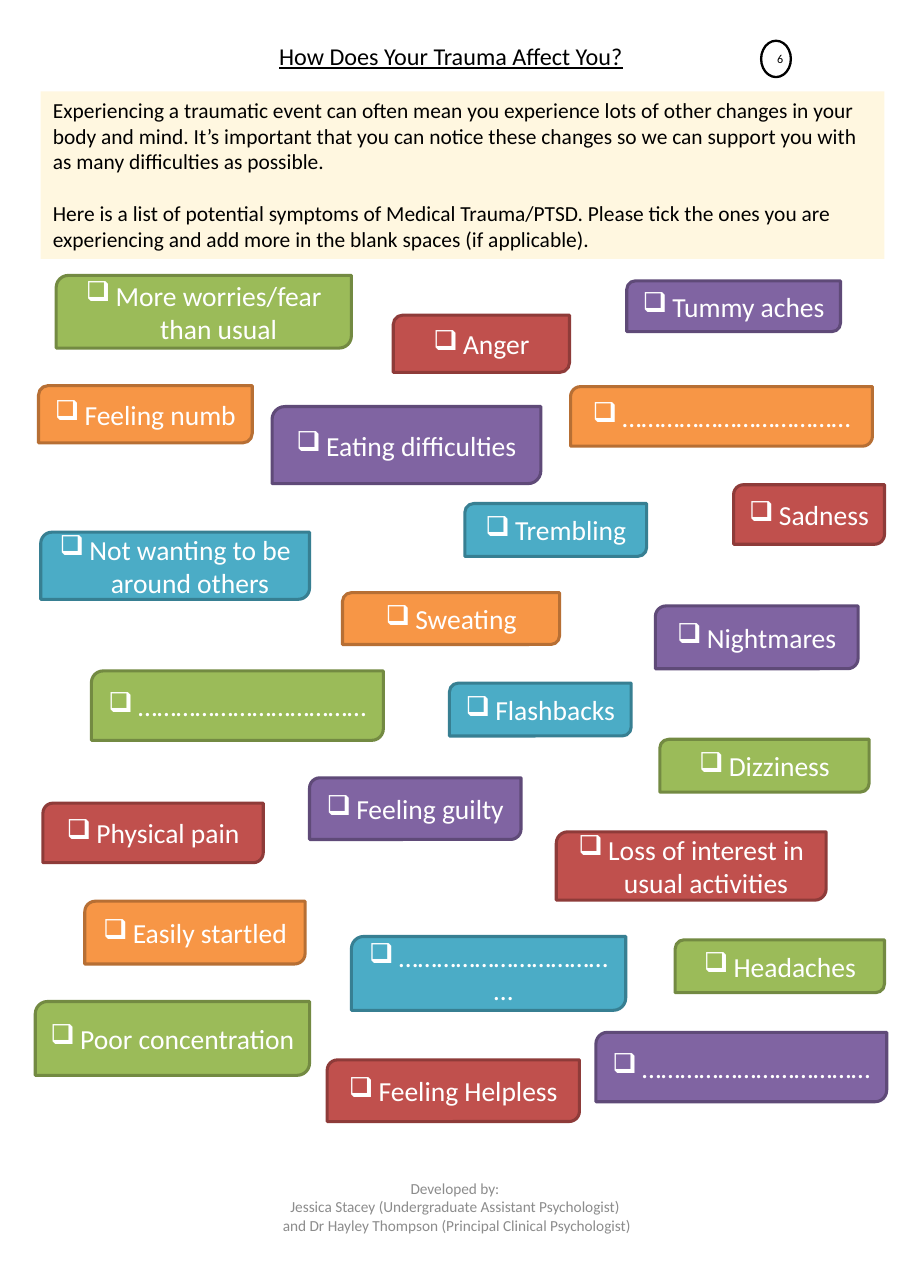
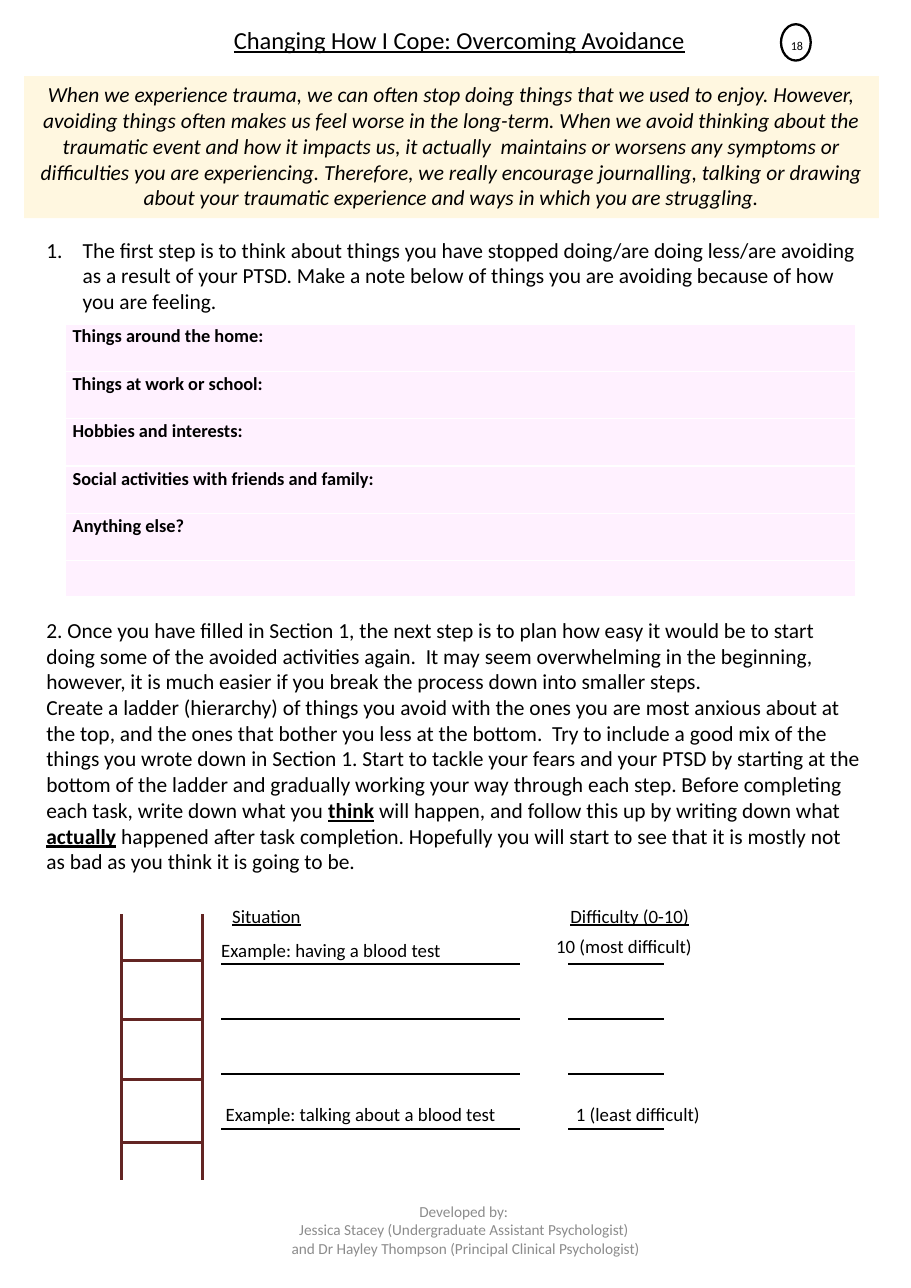
import pptx
import pptx.util
import pptx.dml.color
import pptx.enum.shapes
import pptx.enum.text
import pptx.oxml.ns
import lxml.etree

Inches = pptx.util.Inches
Pt = pptx.util.Pt
RGBColor = pptx.dml.color.RGBColor
SHAPE = pptx.enum.shapes.MSO_SHAPE
ALIGN = pptx.enum.text.PP_ALIGN
ANCHOR = pptx.enum.text.MSO_ANCHOR
qn = pptx.oxml.ns.qn

# Shared look
FONT = "Calibri"
BLACK = RGBColor(0x00, 0x00, 0x00)
WHITE = RGBColor(0xFF, 0xFF, 0xFF)
GREY = RGBColor(0x8C, 0x8C, 0x8C)
AMBER = RGBColor(0xFF, 0xC0, 0x00)
PINK = RGBColor(0xFF, 0xCC, 0xFF)
BROWN = RGBColor(0x63, 0x25, 0x23)

# Tag colours: fill, line
RED = RGBColor(0xC0, 0x50, 0x4D), RGBColor(0x8E, 0x3B, 0x39)
ORANGE = RGBColor(0xF7, 0x96, 0x46), RGBColor(0xB7, 0x6F, 0x34)
PURPLE = RGBColor(0x80, 0x64, 0xA2), RGBColor(0x5F, 0x4A, 0x78)
TEAL = RGBColor(0x4B, 0xAC, 0xC6), RGBColor(0x37, 0x7F, 0x92)
GREEN = RGBColor(0x9B, 0xBB, 0x59), RGBColor(0x73, 0x8A, 0x42)

CREDIT = ["Developed by: ",
          "Jessica Stacey (Undergraduate Assistant Psychologist) ",
          "and Dr Hayley Thompson (Principal Clinical Psychologist)"]

# Symptom tags: left, top, width, height, colours, text
DOTS = "………………………………"
TAGS = [
    (3.57, 2.86, 1.6, 0.52, RED, "Anger"),
    (0.35, 3.5, 1.94, 0.52, ORANGE, "Feeling numb"),
    (0.39, 7.29, 2, 0.54, RED, "Physical pain"),
    (2.47, 3.69, 2.44, 0.7, PURPLE, "Eating difficulties"),
    (3.11, 5.38, 1.97, 0.47, ORANGE, "Sweating"),
    (6.66, 4.4, 1.37, 0.54, RED, "Sadness"),
    (2.81, 7.06, 1.92, 0.56, PURPLE, "Feeling guilty"),
    (4.08, 6.2, 1.65, 0.48, TEAL, "Flashbacks"),
    (0.51, 2.5, 2.68, 0.66, GREEN, "More worries/fear than usual"),
    (6.13, 8.53, 1.9, 0.48, GREEN, "Headaches"),
    (0.32, 9.09, 2.49, 0.67, GREEN, "Poor concentration"),
    (0.37, 4.83, 2.44, 0.61, TEAL, "Not wanting to be around others"),
    (5.05, 7.55, 2.45, 0.62, RED, "Loss of interest in usual activities"),
    (0.77, 8.18, 2, 0.57, ORANGE, "Easily startled"),
    (5.95, 5.5, 1.84, 0.57, PURPLE, "Nightmares"),
    (5.69, 2.55, 1.94, 0.46, PURPLE, "Tummy aches"),
    (5.41, 9.37, 2.64, 0.63, PURPLE, DOTS),
    (0.83, 6.09, 2.65, 0.63, GREEN, DOTS),
    (3.19, 8.5, 2.49, 0.67, TEAL, DOTS),
    (5.18, 3.51, 2.74, 0.54, ORANGE, DOTS),
    (2.97, 9.62, 2.29, 0.56, RED, "Feeling Helpless"),
    (4.22, 4.57, 1.65, 0.48, TEAL, "Trembling"),
    (5.99, 6.71, 1.9, 0.48, GREEN, "Dizziness"),
]

INTRO = [
    "Experiencing a traumatic event can often mean you experience lots of "
    "other changes in your body and mind. It’s important that you can notice "
    "these changes so we can support you with as many difficulties as possible.",
    "Here is a list of potential symptoms of Medical Trauma/PTSD. Please tick "
    "the ones you are experiencing and add more in the blank spaces (if "
    "applicable)."]

AVOID = [
    "When we experience trauma, we can often stop doing things that we used to "
    "enjoy. However, avoiding things often makes us feel worse in the "
    "long-term. When we avoid thinking about the traumatic event and how it "
    "impacts us, it actually  maintains or worsens any symptoms or "
    "difficulties you are experiencing. Therefore, we really encourage "
    "journalling, talking or drawing about your traumatic experience and ways "
    "in which you are struggling."]

FIRST = [
    "The first step is to think about things you have stopped doing/are doing "
    "less/are avoiding as a result of your PTSD. Make a note below of things "
    "you are avoiding because of how you are feeling."]

# A tuple holds runs; every second run is stressed
NEXT = [
    "2. Once you have filled in Section 1, the next step is to plan how easy "
    "it would be to start doing some of the avoided activities again.  It may "
    "seem overwhelming in the beginning, however, it is much easier if you "
    "break the process down into smaller steps.",
    ("Create a ladder (hierarchy) of things you avoid with the ones you are "
     "most anxious about at the top, and the ones that bother you less at the "
     "bottom.  Try to include a good mix of the things you wrote down in "
     "Section 1. Start to tackle your fears and your PTSD by starting at the "
     "bottom of the ladder and gradually working your way through each step. "
     "Before completing each task, write down what you ", "think",
     " will happen, and follow this up by writing down what ", "actually",
     " happened after task completion. Hopefully you will start to see that "
     "it is mostly not as bad as you think it is going to be.")]

ROWS = ["Things around the home:", "Things at work or school:",
        "Hobbies and interests:", "Social activities with friends and family:",
        "Anything else?", ""]

# Ladder labels: left, top, width, text, underline
LABELS = [
    (2.01, 8.16, 2, "Situation", True),
    (5.08, 8.16, 1.5, "Difficulty (0-10)", True),
    (1.91, 8.47, 3, "Example: having a blood test", False),
    (4.95, 8.43, 1.48, "10 (most difficult)", False),
    (1.95, 9.96, 2.9, "Example: talking about a blood test", False),
    (5.13, 9.96, 1.48, "1 (least difficult)", False),
]


def write(frame, paras, size=14, color=BLACK, align=ALIGN.LEFT, bold=False,
          italic=False, line=False, gap=0, space=None, bullet=None, indent=0):
    """Fill a text frame; bullet is a tag name with its attributes."""
    for i, para in enumerate(paras):
        p = frame.paragraphs[0] if i == 0 else frame.add_paragraph()
        p.alignment = align
        p.font.size = Pt(size)
        p.line_spacing = space
        if i:
            p.space_before = Pt(gap)
        if bullet:
            tag, attrs = bullet
            props = p._p.get_or_add_pPr()
            props.set("marL", str(Inches(indent)))
            props.set("indent", str(-Inches(indent)))
            lxml.etree.SubElement(props, qn(tag), attrs)
        for j, words in enumerate(para if isinstance(para, tuple) else (para,)):
            stress = j % 2 == 1
            run = p.add_run()
            run.text = words
            font = run.font
            font.name, font.size = FONT, Pt(size)
            font.color.rgb = color
            font.bold, font.italic = bold or stress, italic
            font.underline = line or stress


def pad(frame, side, top, anchor):
    frame.word_wrap = True
    frame.margin_left = frame.margin_right = Inches(side)
    frame.margin_top = frame.margin_bottom = Inches(top)
    frame.vertical_anchor = anchor


def label(slide, x, y, w, h, paras, side=0.1, top=0.05, anchor=ANCHOR.TOP,
          **style):
    box = slide.shapes.add_textbox(Inches(x), Inches(y), Inches(w), Inches(h))
    pad(box.text_frame, side, top, anchor)
    write(box.text_frame, paras, **style)


def block(slide, kind, x, y, w, h, fill=None, edge=None, width=1.5):
    shape = slide.shapes.add_shape(kind, Inches(x), Inches(y), Inches(w),
                                   Inches(h))
    shape.shadow.inherit = False
    if fill is None:
        shape.fill.background()
    else:
        shape.fill.solid()
        shape.fill.fore_color.rgb = fill
    if edge is None:
        shape.line.fill.background()
    else:
        shape.line.color.rgb = edge
        shape.line.width = Pt(width)
    return shape


def fade(node, share):
    """Set the opacity, in percent, of the first colour in a node."""
    color = next(node.iter(qn("a:srgbClr")))
    lxml.etree.SubElement(color, qn("a:alpha"), val=str(share * 1000))


def band(slide, x, y, w, h, paras, **style):
    shape = block(slide, SHAPE.RECTANGLE, x, y, w, h, AMBER)
    fade(shape._element, 12)
    pad(shape.text_frame, 0.11, 0.05, ANCHOR.TOP)
    write(shape.text_frame, paras, **style)


def tag(slide, x, y, w, h, colors, words):
    shape = block(slide, SHAPE.ROUND_2_DIAG_RECTANGLE, x, y, w, h, *colors,
                  width=2)
    pad(shape.text_frame, 0.1, 0.05, ANCHOR.MIDDLE)
    write(shape.text_frame, [words], size=18, color=WHITE, align=ALIGN.CENTER,
          bullet=("a:buChar", {"char": "❑"}), indent=0.27)


def rule(slide, x1, y1, x2, y2, color=BLACK, width=1.5):
    line = slide.shapes.add_connector(
        pptx.enum.shapes.MSO_CONNECTOR.STRAIGHT,
        Inches(x1), Inches(y1), Inches(x2), Inches(y2))
    line.line.color.rgb = color
    line.line.width = Pt(width)
    lxml.etree.SubElement(line._element.spPr, qn("a:effectLst"))


def badge(slide, x, y, number, drop):
    """Ringed page number; drop is the top of the number's box."""
    block(slide, SHAPE.OVAL, x, y, 0.27, 0.33, edge=BLACK)
    label(slide, x - 0.04, drop, 0.27, 0.49, [number], side=0.03,
          anchor=ANCHOR.MIDDLE, size=7.9, align=ALIGN.RIGHT)


def title(slide, x, y, w, words, size):
    label(slide, x, y, w, 0.36, [words], side=0.05, top=0.04,
          anchor=ANCHOR.MIDDLE, size=size, align=ALIGN.CENTER, line=True)


def footer(slide, x, y):
    label(slide, x, y, 3.71, 0.62, CREDIT, side=0.12, top=0.06,
          anchor=ANCHOR.MIDDLE, size=10, color=GREY, align=ALIGN.CENTER)


def grid(slide, x, y, w):
    step, last = 0.43, 0.33
    high = step * (len(ROWS) - 1) + last
    table = slide.shapes.add_table(len(ROWS), 1, Inches(x), Inches(y),
                                   Inches(w), Inches(high)).table
    for row, words in zip(table.rows, ROWS):
        row.height = Inches(step if words else last)
        cell = row.cells[0]
        cell.margin_left = cell.margin_right = Inches(0.07)
        cell.margin_top = cell.margin_bottom = 0
        cell.fill.solid()
        cell.fill.fore_color.rgb = PINK
        fade(cell._tc, 26)
        write(cell.text_frame, [words] if words else [()], size=12, bold=True,
              space=1.07)


def ladder(slide):
    left, right, top, foot = 1.1, 1.84, 8.3, 10.71
    for x in (left, right):
        rule(slide, x, top, x, foot, BROWN, 2)
    for y in (8.72, 9.25, 9.8, 10.37):
        rule(slide, right, y, left, y, BROWN, 2)
    # Writing lines beside the ladder
    for i in range(4):
        y = 8.75 + 0.5 * i
        for x1, x2 in ((2.01, 4.72), (5.16, 6.03)):
            rule(slide, x1, y, x2, y)
    for x, y, w, words, line in LABELS:
        label(slide, x, y, w, 0.31, [words], size=12.3, line=line)


def main():
    deck = pptx.Presentation()
    deck.slide_width, deck.slide_height = Inches(8.27), Inches(11.69)
    blank = deck.slide_layouts[6]

    # Symptom checklist
    page = deck.slides.add_slide(blank)
    title(page, 2.15, 0.33, 3.89, "How Does Your Trauma Affect You?", 15.8)
    band(page, 0.37, 0.83, 7.66, 1.52, INTRO, gap=17)
    badge(page, 6.91, 0.37, "6", 0.29)
    footer(page, 2.29, 10.64)
    for item in TAGS:
        tag(page, *item)

    # Overcoming avoidance
    page = deck.slides.add_slide(blank)
    title(page, 2, 0.18, 4.34, "Changing How I Cope: Overcoming Avoidance", 16)
    band(page, 0.22, 0.69, 7.76, 1.29, AVOID, align=ALIGN.CENTER, italic=True)
    badge(page, 7.09, 0.22, "18", 0.17)
    label(page, 0.33, 2.11, 7.62, 0.8, FIRST, side=0.09, top=0.04,
          bullet=("a:buAutoNum", {"type": "arabicPeriod"}), indent=0.33)
    grid(page, 0.59, 2.94, 7.18)
    label(page, 0.33, 5.56, 7.61, 2.44, NEXT, side=0.09, top=0.04)
    ladder(page)
    footer(page, 2.37, 10.85)

    deck.save("out.pptx")


if __name__ == "__main__":
    main()
